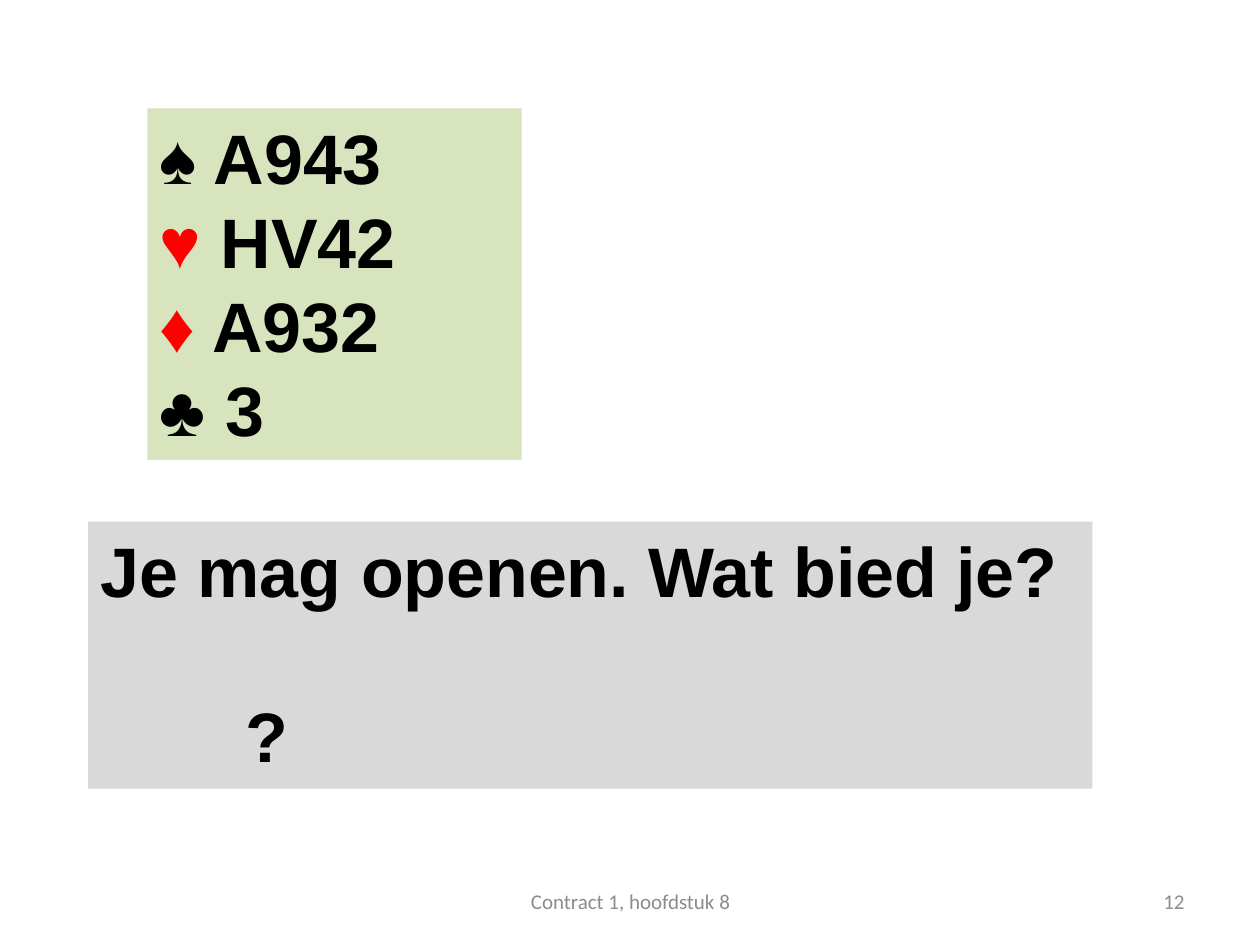
from dataclasses import dataclass

from pptx import Presentation
from pptx.dml.color import RGBColor
from pptx.enum.text import MSO_ANCHOR, PP_ALIGN
from pptx.util import Inches, Pt

LEFT, CENTER, RIGHT = PP_ALIGN.LEFT, PP_ALIGN.CENTER, PP_ALIGN.RIGHT
TOP, MIDDLE = MSO_ANCHOR.TOP, MSO_ANCHOR.MIDDLE
BLANK_LAYOUT = 6


@dataclass(frozen=True)
class Theme:
    black: str = "000000"
    red: str = "FF0000"
    footer_grey: str = "8C8C8C"
    hand_green: str = "D7E4BD"
    question_grey: str = "D9D9D9"
    body_size: int = 40
    footer_size: int = 12
    body_font: str = "Arial"
    footer_font: str = "Calibri"


THEME = Theme()


@dataclass(frozen=True)
class TextStyle:
    font: str
    size: int
    color: str
    bold: bool = False
    align: int = LEFT
    anchor: int = TOP


@dataclass(frozen=True)
class Run:
    text: str
    color: str | None = None


@dataclass(frozen=True)
class Line:
    runs: tuple[Run, ...]
    space_before: float = 0
    indent: float = 0


@dataclass(frozen=True)
class Panel:
    left: float
    top: float
    width: float
    height: float
    lines: tuple[Line, ...]
    style: TextStyle
    fill: str | None = None


def suit_line(suit: str, cards: str, suit_color: str) -> Line:
    return Line((Run(suit, suit_color), Run(f" {cards}")))


def add_line(paragraph, line: Line, style: TextStyle) -> None:
    paragraph.alignment = style.align
    paragraph.space_before = Pt(line.space_before)
    if line.indent:
        properties = paragraph._p.get_or_add_pPr()
        properties.set("marL", str(Inches(line.indent)))
        properties.set("indent", "0")
    for item in line.runs:
        run = paragraph.add_run()
        run.text = item.text
        font_format = {"name": style.font, "size": Pt(style.size), "bold": style.bold}
        for attribute, value in font_format.items():
            setattr(run.font, attribute, value)
        run.font.color.rgb = RGBColor.from_string(item.color or style.color)


def add_panel(slide, panel: Panel) -> None:
    box = (panel.left, panel.top, panel.width, panel.height)
    shape = slide.shapes.add_textbox(*map(Inches, box))
    if panel.fill:
        shape.fill.solid()
        shape.fill.fore_color.rgb = RGBColor.from_string(panel.fill)
    frame = shape.text_frame
    frame_format = {"word_wrap": True, "vertical_anchor": panel.style.anchor}
    for attribute, value in frame_format.items():
        setattr(frame, attribute, value)
    for index, line in enumerate(panel.lines):
        paragraph = frame.add_paragraph() if index else frame.paragraphs[0]
        add_line(paragraph, line, panel.style)


def footer_style(align: int) -> TextStyle:
    return TextStyle(THEME.footer_font, THEME.footer_size, THEME.footer_grey,
                     align=align, anchor=MIDDLE)


BODY = TextStyle(THEME.body_font, THEME.body_size, THEME.black, bold=True)

HAND = (
    suit_line("♠", "A943", THEME.black),
    suit_line("♥", "HV42", THEME.red),
    suit_line("♦", "A932", THEME.red),
    suit_line("♣", "3", THEME.black),
)
QUESTION = (
    Line((Run("Je mag openen. Wat bied je?"),)),
    Line((Run("?"),), space_before=THEME.body_size * 1.15, indent=1.15),
)
PANELS = (
    Panel(1.17, 0.86, 2.97, 2.79, HAND, BODY, THEME.hand_green),
    Panel(0.7, 4.14, 7.97, 2.12, QUESTION, BODY, THEME.question_grey),
    Panel(7.17, 6.95, 2.33, 0.4, (Line((Run("12"),)),), footer_style(RIGHT)),
    Panel(3.42, 6.95, 3.17, 0.4, (Line((Run("Contract 1, hoofdstuk 8"),)),),
          footer_style(CENTER)),
)


def main() -> None:
    presentation = Presentation()
    presentation.slide_width = Inches(10)
    presentation.slide_height = Inches(7.5)
    slide = presentation.slides.add_slide(presentation.slide_layouts[BLANK_LAYOUT])
    for panel in PANELS:
        add_panel(slide, panel)
    presentation.save("out.pptx")


if __name__ == "__main__":
    main()
